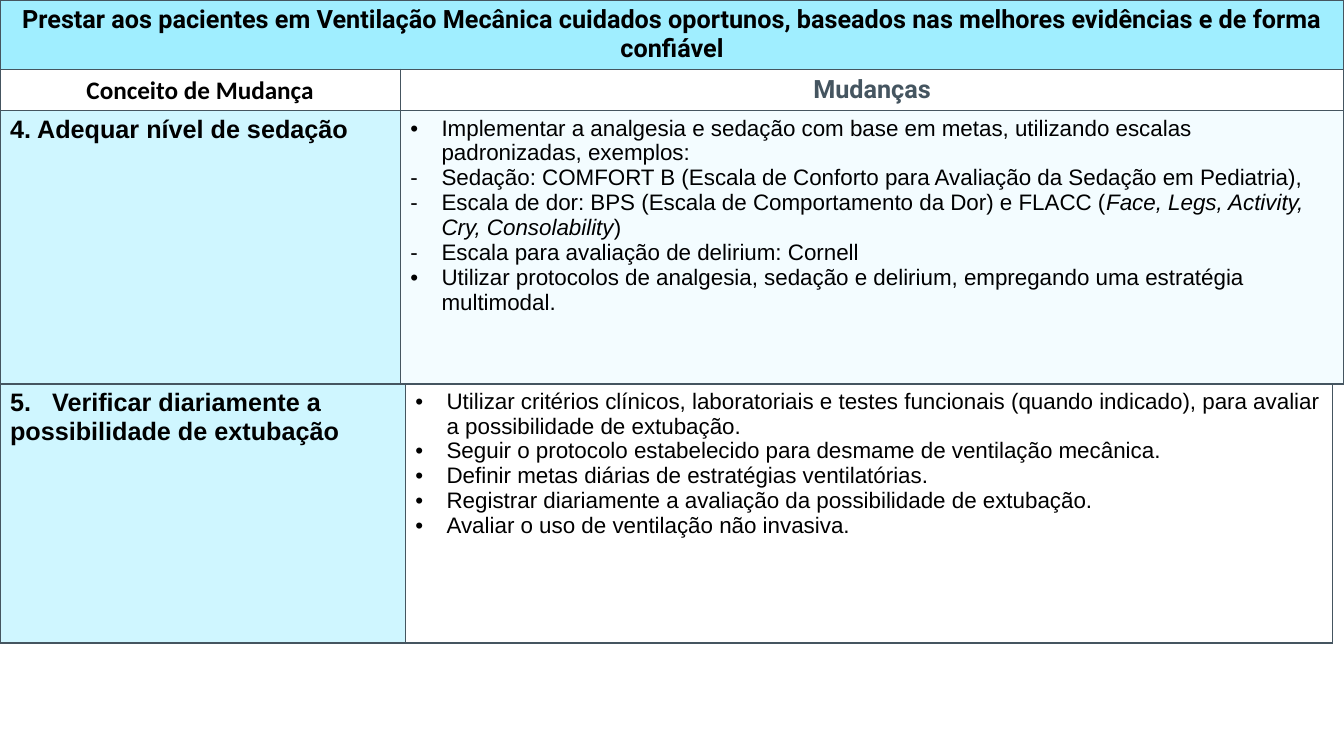
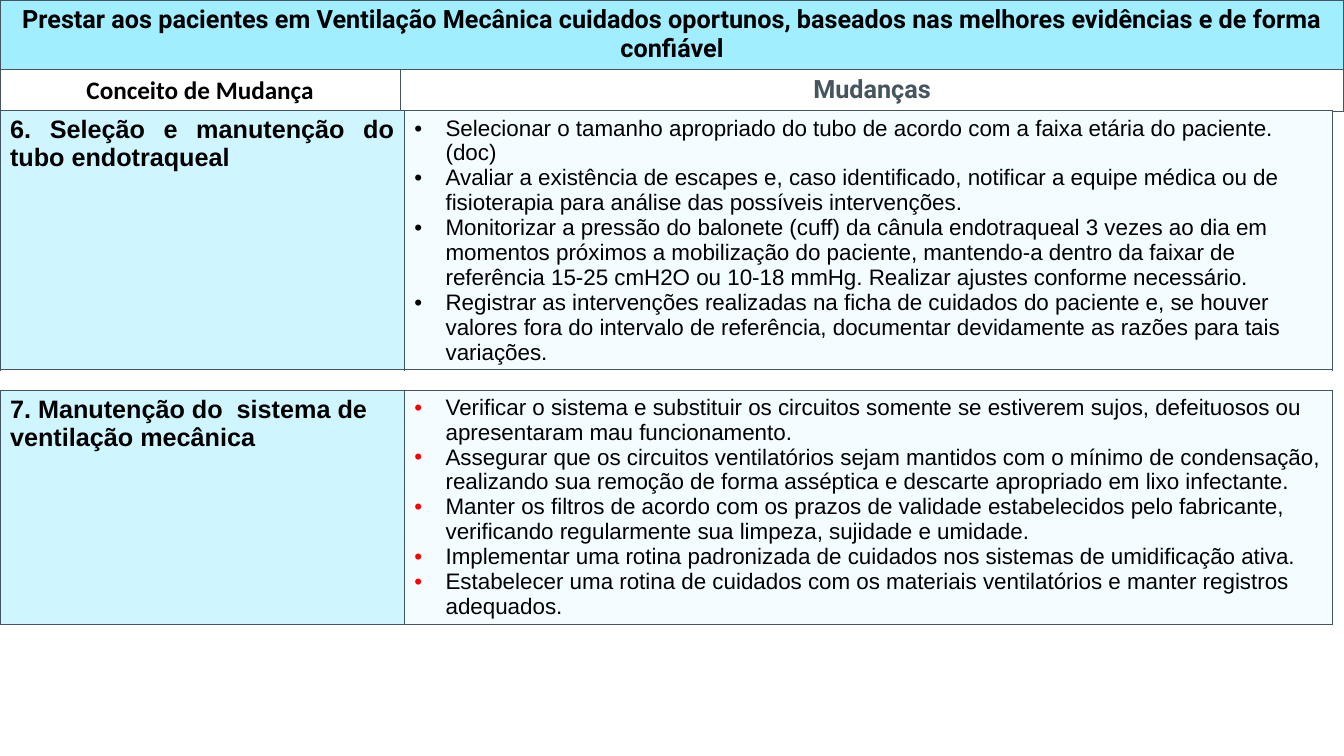
from dataclasses import dataclass

from lxml.etree import SubElement
from pptx import Presentation
from pptx.dml.color import RGBColor
from pptx.enum.text import MSO_ANCHOR, PP_ALIGN
from pptx.oxml.ns import qn
from pptx.util import Inches, Pt


@dataclass(frozen=True)
class Theme:
    banner: str = "A0EEFF"
    concept: str = "CFF6FF"
    changes: str = "F3FCFF"
    white: str = "FFFFFF"
    ink: str = "000000"
    slate: str = "455560"
    red: str = "FF0000"
    body_font: str = "Arial"
    title_font: str = "Roboto"
    label_font: str = "Calibri"
    head_size: int = 18
    body_size: int = 16
    border: int = 1
    indent: float = 0.31


T = Theme()
WIDTH, HEIGHT = 13.33, 7.5
HEAD_COLS = (3.97, 9.36)
HEAD_ROWS = (0.68, 0.42)
HEAD_H = sum(HEAD_ROWS)

TITLE = ("Prestar aos pacientes em Ventilação Mecânica cuidados oportunos, "
         "baseados nas melhores evidências e de forma confiável")
LABELS = ("Conceito de Mudança", "Mudanças")

SLIDES = [
    [
        dict(
            concept="4. Adequar nível de sedação",
            top=HEAD_H, height=2.71, cols=HEAD_COLS,
            items=[
                ("•", "Implementar a analgesia e sedação com base em metas, utilizando escalas padronizadas, exemplos:"),
                ("-", "Sedação: COMFORT B (Escala de Conforto para Avaliação da Sedação em Pediatria),"),
                ("-", "Escala de dor: BPS (Escala de Comportamento da Dor) e FLACC (",
                 "Face, Legs, Activity, Cry, Consolability", ")"),
                ("-", "Escala para avaliação de delirium: Cornell"),
                ("•", "Utilizar protocolos de analgesia, sedação e delirium, empregando uma estratégia multimodal."),
            ],
        ),
        dict(
            concept="5.   Verificar diariamente a possibilidade de extubação",
            top=3.81, height=2.57, cols=(4.02, 9.2), fill=T.white,
            items=[
                ("•", "Utilizar critérios clínicos, laboratoriais e testes funcionais (quando indicado), para avaliar a possibilidade de extubação."),
                ("•", "Seguir o protocolo estabelecido para desmame de ventilação mecânica."),
                ("•", "Definir metas diárias de estratégias ventilatórias."),
                ("•", "Registrar diariamente a avaliação da possibilidade de extubação."),
                ("•", "Avaliar o uso de ventilação não invasiva."),
            ],
        ),
    ],
    [
        dict(
            concept="6. Seleção e manutenção do tubo endotraqueal",
            top=HEAD_H, height=2.57, cols=(4.01, 9.21), align=PP_ALIGN.JUSTIFY,
            items=[
                ("•", "Selecionar o tamanho apropriado do tubo de acordo com a faixa etária do paciente. (doc)"),
                ("•", "Avaliar a existência de escapes e, caso identificado, notificar a equipe médica ou de fisioterapia para análise das possíveis intervenções."),
                ("•", "Monitorizar a pressão do balonete (cuff) da cânula endotraqueal 3 vezes ao dia em momentos próximos a mobilização do paciente, mantendo-a dentro da faixar de referência 15-25 cmH2O ou 10-18 mmHg. Realizar ajustes conforme necessário."),
                ("•", "Registrar as intervenções realizadas na ficha de cuidados do paciente e, se houver valores fora do intervalo de referência, documentar devidamente as razões para tais variações."),
            ],
        ),
        dict(
            concept="7. Manutenção do  sistema de ventilação mecânica",
            top=3.87, height=2.32, cols=(4.01, 9.21), bullet_color=T.red,
            items=[
                ("•", "Verificar o sistema e substituir os circuitos somente se estiverem sujos, defeituosos ou apresentaram mau funcionamento."),
                ("•", "Assegurar que os circuitos ventilatórios sejam mantidos com o mínimo de condensação, realizando sua remoção de forma asséptica e descarte apropriado em lixo infectante."),
                ("•", "Manter os filtros de acordo com os prazos de validade estabelecidos pelo fabricante, verificando regularmente sua limpeza, sujidade e umidade."),
                ("•", "Implementar uma rotina padronizada de cuidados nos sistemas de umidificação ativa."),
                ("•", "Estabelecer uma rotina de cuidados com os materiais ventilatórios e manter registros adequados."),
            ],
        ),
    ],
]


def write(p, *texts, font=T.body_font, size=T.head_size, color=T.ink,
          bold=True, align=None, bullet=None, bullet_color=T.ink):
    p.alignment = align
    for i, text in enumerate(texts):
        r = p.add_run()
        r.text = text
        r.font.name = font
        r.font.size = Pt(size)
        r.font.bold = bold
        r.font.italic = i % 2 == 1
        r.font.color.rgb = RGBColor.from_string(color)
    if bullet:
        pPr = p._p.get_or_add_pPr()
        pPr.set("marL", str(Inches(T.indent)))
        pPr.set("indent", str(-Inches(T.indent)))
        clr = SubElement(pPr, qn("a:buClr"))
        SubElement(clr, qn("a:srgbClr"), val=bullet_color)
        SubElement(pPr, qn("a:buFont"), typeface=T.body_font)
        SubElement(pPr, qn("a:buChar"), char=bullet)


def style_cell(cell, fill):
    tcPr = cell._tc.get_or_add_tcPr()
    for side in ("lnL", "lnR", "lnT", "lnB"):
        ln = SubElement(tcPr, qn(f"a:{side}"), w=str(Pt(T.border)))
        solid = SubElement(ln, qn("a:solidFill"))
        SubElement(solid, qn("a:srgbClr"), val=T.slate)
    cell.fill.solid()
    cell.fill.fore_color.rgb = RGBColor.from_string(fill)


def add_grid(slide, top, cols, rows, fills):
    frame = slide.shapes.add_table(len(rows), len(cols), 0, Inches(top),
                                   Inches(sum(cols)), Inches(sum(rows)))
    table = frame.table
    table.first_row = table.horz_banding = False
    for col, width in zip(table.columns, cols):
        col.width = Inches(width)
    for row, height, row_fills in zip(table.rows, rows, fills):
        row.height = Inches(height)
        for cell, fill in zip(row.cells, row_fills):
            style_cell(cell, fill)
    return table


def add_header(slide):
    table = add_grid(slide, 0, HEAD_COLS, HEAD_ROWS,
                     [(T.banner, T.banner), (T.white, T.white)])
    banner = table.cell(0, 0)
    banner.merge(table.cell(0, 1))
    write(banner.text_frame.paragraphs[0], TITLE,
          font=T.title_font, align=PP_ALIGN.CENTER)
    formats = ((T.label_font, T.ink), (T.title_font, T.slate))
    for i, (label, (font, color)) in enumerate(zip(LABELS, formats)):
        cell = table.cell(1, i)
        cell.vertical_anchor = MSO_ANCHOR.MIDDLE
        write(cell.text_frame.paragraphs[0], label,
              font=font, color=color, align=PP_ALIGN.CENTER)
    concept = table.cell(1, 0)
    concept.margin_left = concept.margin_right = concept.margin_top = Inches(0.01)
    concept.margin_bottom = 0


def add_section(slide, concept, items, top, height, cols,
                fill=T.changes, align=None, bullet_color=T.ink):
    table = add_grid(slide, top, cols, (height,), [(T.concept, fill)])
    write(table.cell(0, 0).text_frame.paragraphs[0], concept, align=align)
    tf = table.cell(0, 1).text_frame
    for i, (bullet, *texts) in enumerate(items):
        p = tf.add_paragraph() if i else tf.paragraphs[0]
        write(p, *texts, size=T.body_size, bold=False,
              bullet=bullet, bullet_color=bullet_color)


def main():
    prs = Presentation()
    prs.slide_width, prs.slide_height = Inches(WIDTH), Inches(HEIGHT)
    for sections in SLIDES:
        slide = prs.slides.add_slide(prs.slide_layouts[6])
        add_header(slide)
        for section in sections:
            add_section(slide, **section)
    prs.save("out.pptx")


if __name__ == "__main__":
    main()
